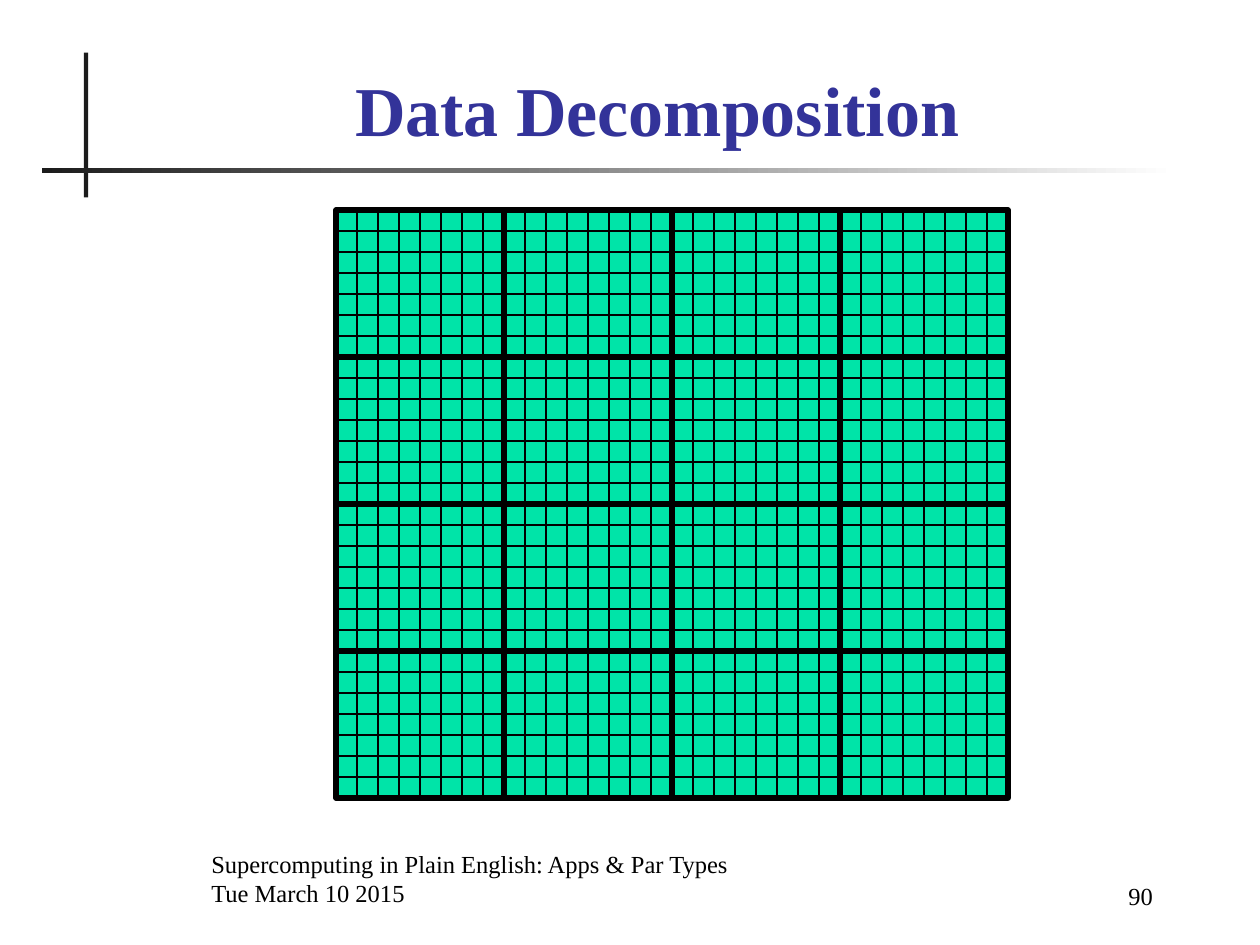
from dataclasses import dataclass

from lxml import etree
from pptx import Presentation
from pptx.dml.color import RGBColor
from pptx.enum.shapes import MSO_CONNECTOR, MSO_SHAPE
from pptx.enum.text import MSO_ANCHOR, PP_ALIGN
from pptx.oxml.ns import qn
from pptx.util import Cm, Pt

RECT = MSO_SHAPE.RECTANGLE
STRAIGHT = MSO_CONNECTOR.STRAIGHT
BOTTOM = MSO_ANCHOR.BOTTOM
LEFT, CENTER = PP_ALIGN.LEFT, PP_ALIGN.CENTER
SITE_TOP, SITE_LEFT, SITE_BOTTOM, SITE_RIGHT = range(4)

FONT = "Times New Roman"
COLORS = {
    "rule": "1C1C1C",
    "white": "FFFFFF",
    "title": "333399",
    "text": "000000",
    "grid": "00E4A8",
    "line": "000000",
}

# The mesh is measured in cells and split into equal blocks of cells.
CELL = 2.54 / 6
BLOCK_COLS, BLOCK_ROWS = 8, 7
BLOCKS = 4
COLS, ROWS = BLOCKS * BLOCK_COLS, BLOCKS * BLOCK_ROWS
GRID_X, GRID_Y = 16 * CELL, 10 * CELL
GRID_W, GRID_H = COLS * CELL, ROWS * CELL


@dataclass
class Box:
    x: float
    y: float
    w: float
    h: float

    def lengths(self) -> tuple:
        return Cm(self.x), Cm(self.y), Cm(self.w), Cm(self.h)


@dataclass
class Label:
    box: Box
    lines: list
    size: int
    color: str = "text"
    bold: bool = False
    align: PP_ALIGN = LEFT


LABELS = [
    Label(Box(2.11, 1.27, 22.28, 1.88), ["Data Decomposition"], 40, "title", True, CENTER),
    Label(Box(4.01, 17.15, 15.44, 1.27),
          ["Supercomputing in Plain English: Apps & Par Types", "Tue March 10 2015"], 14),
    Label(Box(19.89, 17.2, 3.6, 1.27), ["90"], 14),
]
LABELS[-1].align = PP_ALIGN.RIGHT


def rgb(name: str) -> RGBColor:
    return RGBColor.from_string(COLORS[name])


def add_rect(shapes, box: Box, fill: str = "", line_width: float = 0):
    """Add a rectangle; an empty fill name or a zero line width leaves that part out."""
    s = shapes.add_shape(RECT, *box.lengths())
    s.shadow.inherit = False
    if fill:
        s.fill.solid()
        s.fill.fore_color.rgb = rgb(fill)
    else:
        s.fill.background()
    if line_width:
        s.line.color.rgb = rgb("line")
        s.line.width = Pt(line_width)
    else:
        s.line.fill.background()
    return s


def add_line(shapes, x1: float, y1: float, x2: float, y2: float):
    s = shapes.add_connector(STRAIGHT, Cm(x1), Cm(y1), Cm(x2), Cm(y2))
    s.line.color.rgb = rgb("line")
    s.line.width = Pt(0.75)
    etree.SubElement(s._element.spPr, qn("a:effectLst"))
    return s


def add_label(shapes, label: Label) -> None:
    tf = shapes.add_textbox(*label.box.lengths()).text_frame
    tf.word_wrap = True
    tf.vertical_anchor = BOTTOM
    for i, line in enumerate(label.lines):
        p = tf.add_paragraph() if i else tf.paragraphs[0]
        p.text = line
        p.alignment = label.align
        p.font.name = FONT
        p.font.size = Pt(label.size)
        p.font.bold = label.bold
        p.font.color.rgb = rgb(label.color)


def add_title_rules(shapes) -> None:
    add_rect(shapes, Box(1.69, 1.06, 0.09, 2.92), "rule")
    s = add_rect(shapes, Box(0.85, 3.39, 22.86, 0.09))
    s.fill.gradient()
    s.fill.gradient_angle = 0
    for stop, name in zip(s.fill.gradient_stops, ("rule", "white")):
        stop.color.rgb = rgb(name)


def add_mesh(shapes) -> None:
    """Draw the fine mesh, then outline the blocks it is decomposed into."""
    grid = add_rect(shapes, Box(GRID_X, GRID_Y, GRID_W, GRID_H), "grid", 0.75)
    for col in range(1, COLS):
        x = GRID_X + col * CELL
        s = add_line(shapes, x, GRID_Y, x, GRID_Y + GRID_H)
        if col == COLS // 2:
            s.begin_connect(grid, SITE_TOP)
            s.end_connect(grid, SITE_BOTTOM)
    for row in range(1, ROWS):
        y = GRID_Y + row * CELL
        s = add_line(shapes, GRID_X, y, GRID_X + GRID_W, y)
        if row == ROWS // 2:
            s.begin_connect(grid, SITE_LEFT)
            s.end_connect(grid, SITE_RIGHT)

    w, h = BLOCK_COLS * CELL, BLOCK_ROWS * CELL
    for row in range(BLOCKS):
        for col in range(BLOCKS):
            add_rect(shapes, Box(GRID_X + col * w, GRID_Y + row * h, w, h), line_width=3)


def main() -> None:
    prs = Presentation()
    prs.slide_width, prs.slide_height = Cm(25.4), Cm(19.05)
    shapes = prs.slides.add_slide(prs.slide_layouts[6]).shapes
    add_title_rules(shapes)
    add_mesh(shapes.add_group_shape().shapes)
    for label in LABELS:
        add_label(shapes, label)
    prs.save("out.pptx")


if __name__ == "__main__":
    main()
